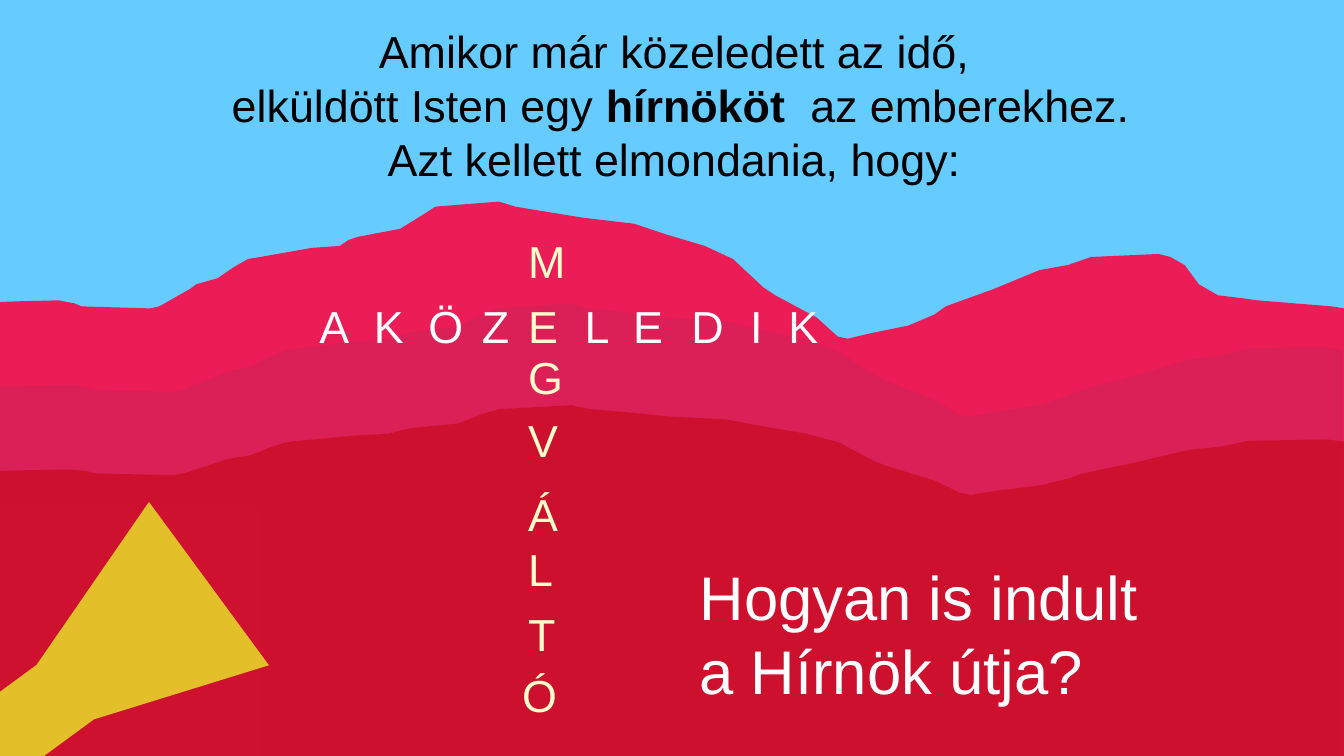
import math

import lxml.etree
import pptx
import pptx.dml.color
import pptx.enum.shapes
import pptx.enum.text
import pptx.oxml.ns
import pptx.util

COLS, ROWS = 13.33, 7.5
UNIT = pptx.util.Inches(1)
SKY, BLACK, WHITE, CREAM = "66CCFF", "000000", "FFFFFF", "FFFFCC"
LETTER = {"size": pptx.util.Pt(32), "name": "Arial"}
QUESTION = {"size": pptx.util.Pt(44), "name": "Arial"}

BACK_RIDGE = [
    (-0.08, 3), (0.17, 2.99), (0.58, 2.98), (0.74, 3.01), (0.81, 3.04), (1.49, 3.06),
    (1.58, 3.04), (1.88, 2.87), (1.95, 2.82), (2.16, 2.76), (2.32, 2.65), (2.46, 2.57),
    (2.58, 2.55), (3.09, 2.46), (3.37, 2.44), (3.46, 2.38), (3.55, 2.35), (3.97, 2.27),
    (4.18, 2.14), (4.32, 2.05), (4.95, 2), (5.11, 2.05), (5.29, 2.08), (5.78, 2.16),
    (6.29, 2.22), (6.62, 2.33), (6.99, 2.44), (7.27, 2.57), (7.57, 2.85), (7.69, 2.93),
    (8.1, 3.15), (8.31, 3.34), (8.41, 3.36), (8.62, 3.31), (9.01, 3.23), (9.27, 3.12),
    (9.38, 3.04), (9.85, 2.87), (10.31, 2.68), (10.59, 2.63), (10.82, 2.55), (11.49, 2.52),
    (11.61, 2.55), (11.75, 2.63), (11.89, 2.82), (12.08, 2.93), (12.33, 2.96),
    (12.47, 2.98), (13.21, 3.04), (13.33, 3.06), (13.35, 3.08)]
FRONT_RIDGE = [
    (-0.08, 3.84), (0.21, 3.83), (0.67, 3.82), (0.86, 3.84), (0.94, 3.87), (1.71, 3.89),
    (1.81, 3.87), (2.16, 3.73), (2.24, 3.69), (2.48, 3.64), (2.66, 3.55), (2.82, 3.48),
    (2.95, 3.46), (3.54, 3.39), (3.85, 3.37), (3.96, 3.33), (4.07, 3.3), (4.54, 3.24),
    (4.78, 3.12), (4.94, 3.06), (5.66, 3.01), (5.84, 3.06), (6.05, 3.08), (6.61, 3.15),
    (7.19, 3.19), (7.57, 3.28), (7.99, 3.37), (8.31, 3.48), (8.65, 3.71), (8.79, 3.78),
    (9.26, 3.96), (9.5, 4.11), (9.61, 4.14), (9.85, 4.09), (10.3, 4.02), (10.59, 3.93),
    (10.72, 3.87), (11.25, 3.73), (11.78, 3.57), (12.1, 3.53), (12.36, 3.46),
    (13.13, 3.44), (13.26, 3.46), (13.32, 3.48)]
MEGAPHONE = [(1.48, 4.98), (2.67, 6.6), (0.93, 7.14), (-0.16, 7.94), (-0.62, 7.32), (0.36, 6.6)]

ACROSS = [("A", 0), ("K", 0.54), ("Ö", 1.08), ("Z", 1.61), ("E", 2.07),
          ("L", 2.63), ("E", 3.11), ("D", 3.69), ("I", 4.27), ("K", 4.65)]
CROSSING = 4
DOWN = [("M", 0), ("G", 1.15), ("V", 1.78), ("Á", 2.51), ("L", 3.06), ("T", 3.7), ("Ó", 4.31)]


def rgb(value):
    """Turn a hex string into a colour."""
    return pptx.dml.color.RGBColor.from_string(value)


def emu(*lengths):
    """Turn grid units into EMU."""
    return [round(n * UNIT) for n in lengths]


def paint(sp, color, alpha=None):
    """Give a shape a flat fill with no outline or shadow."""
    sp.shadow.inherit = False
    sp.fill.solid()
    sp.fill.fore_color.rgb = rgb(color)
    sp.line.fill.background()
    if alpha:
        clr = next(sp.element.iter(pptx.oxml.ns.qn("a:srgbClr")))
        lxml.etree.SubElement(clr, pptx.oxml.ns.qn("a:alpha"), val=str(alpha * 1000))


def add_text(s, box, lines, style, color, align=None):
    """Add a text box whose lines are lists of (text, bold) runs."""
    tf = s.shapes.add_textbox(*emu(*box)).text_frame
    tf.word_wrap = True
    tf.auto_size = pptx.enum.text.MSO_AUTO_SIZE.SHAPE_TO_FIT_TEXT
    for i, line in enumerate(lines):
        p = tf.add_paragraph() if i else tf.paragraphs[0]
        p.alignment = align
        for text, bold in line:
            r = p.add_run()
            r.text = text
            for key, value in {**style, "bold": bold}.items():
                setattr(r.font, key, value)
            r.font.color.rgb = rgb(color)


def add_outline(s, box, points):
    """Add a closed freeform stretched to fill the box."""
    x, y, w, h = box
    xs, ys = zip(*points)
    kx, ky = w / (max(xs) - min(xs)), h / (max(ys) - min(ys))
    placed = [emu(x + (px - min(xs)) * kx, y + (py - min(ys)) * ky) for px, py in points]
    fb = s.shapes.build_freeform(*placed[0])
    fb.add_line_segments(placed[1:], close=True)
    return fb.convert_to_shape()


def add_hill(s, box, ridge, floor, color, alpha=None):
    """Fill the box with a hill from its ridge down to the floor."""
    corners = [(ridge[-1][0], floor), (ridge[0][0], floor)]
    paint(add_outline(s, box, ridge + corners), color, alpha)


def add_across(s, box):
    """Place the letters of the crossword row."""
    x, y, w, h = box
    for i, (letter, dx) in enumerate(ACROSS):
        color = CREAM if i == CROSSING else WHITE
        add_text(s, (x + dx, y, w, h), [[(letter, False)]], LETTER, color)


def add_down(s, box):
    """Place the letters of the crossword column."""
    x, y, w, h = box
    for letter, dy in DOWN:
        nudge = 0.06 if letter == "Ó" else 0
        add_text(s, (x - nudge, y + dy, w, h), [[(letter, False)]], LETTER, CREAM)


def add_megaphone(s, box, angle):
    """Add the turned megaphone around the centre of its box."""
    x, y, w, h = box
    cx, cy = x + w / 2, y + h / 2
    cos, sin = math.cos(math.radians(angle)), math.sin(math.radians(angle))
    upright = [((px - cx) * cos + (py - cy) * sin, (py - cy) * cos - (px - cx) * sin)
               for px, py in MEGAPHONE]
    sp = add_outline(s, box, upright)
    sp.rotation = angle
    paint(sp, "E3BF29")


def build_slide(prs):
    """Build the crossword slide from back to front."""
    s = prs.slides.add_slide(prs.slide_layouts[6])
    s.background.fill.solid()
    s.background.fill.fore_color.rgb = rgb(SKY)
    add_hill(s, (-0.08, 2, 13.43, 5.5), BACK_RIDGE, 7.5, "EC1C57")
    intro = [[("Amikor már közeledett az idő, ", False)],
             [("elküldött Isten egy", False), (" hírnököt  ", True), ("az emberekhez.", False)],
             [("Azt kellett elmondania, hogy: ", False)]]
    add_text(s, (1.84, 0.19, 9.82, 1.72), intro, LETTER, BLACK, pptx.enum.text.PP_ALIGN.CENTER)
    add_hill(s, (-0.08, 3.01, 13.4, 4.53), FRONT_RIDGE, 7.54, "DA2056")
    add_across(s, (3.07, 2.91, 0.45, 0.64))
    add_hill(s, (-0.08, 4.02, 13.42, 3.57), FRONT_RIDGE, 7.54, "C00000", 47)
    add_down(s, (5.14, 2.27, 0.45, 0.64))
    patch = s.shapes.add_shape(pptx.enum.shapes.MSO_SHAPE.RECTANGLE, *emu(-0.08, 5.06, 2.67, 2.52))
    paint(patch, "CD112E")
    add_megaphone(s, (-0.17, 5.16, 2.01, 3.07), 233.8)
    question = [[("Hogyan is indult", False)], [("a Hírnök útja?", False)]]
    add_text(s, (6.84, 5.5, 5.56, 1.58), question, QUESTION, WHITE)


def main():
    """Create and save the presentation."""
    prs = pptx.Presentation()
    prs.slide_width, prs.slide_height = emu(COLS, ROWS)
    build_slide(prs)
    prs.save("out.pptx")


if __name__ == "__main__":
    main()
